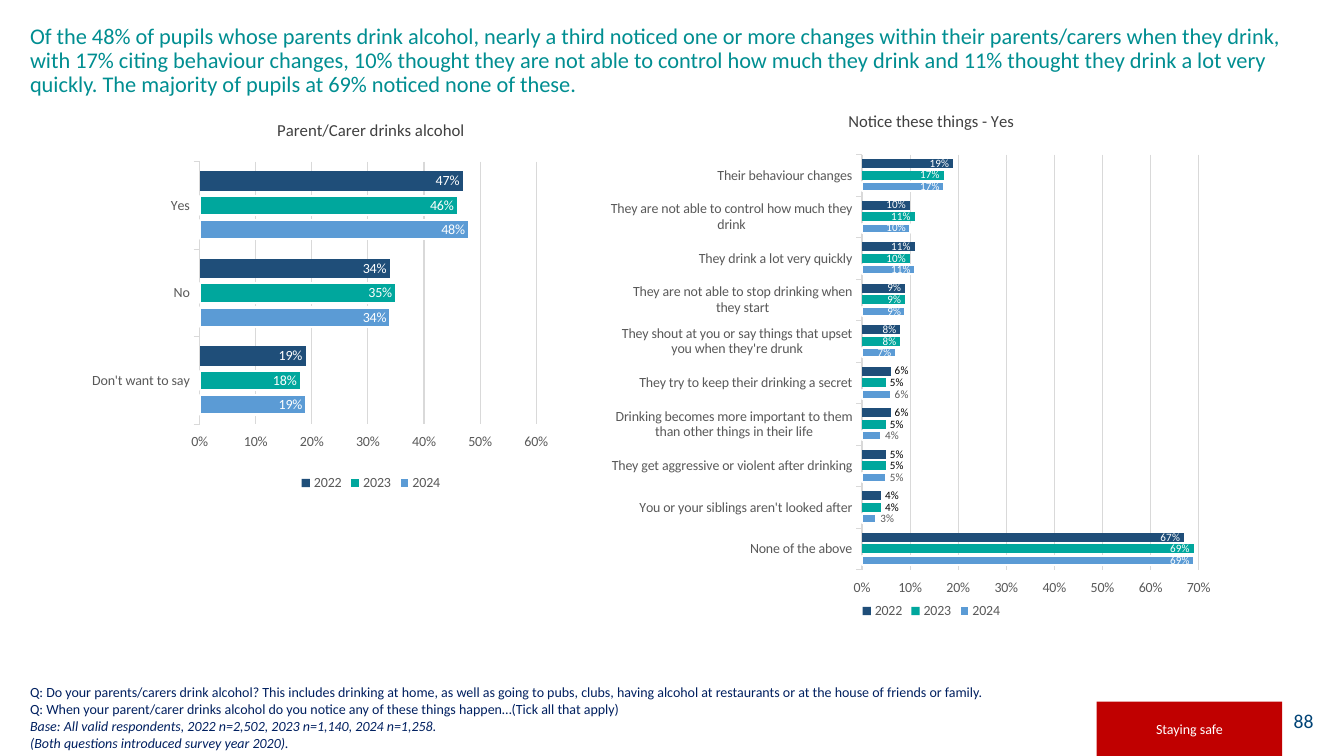
from lxml.etree import SubElement
from pptx import Presentation
from pptx.chart.data import CategoryChartData
from pptx.dml.color import RGBColor
from pptx.enum.chart import XL_CHART_TYPE, XL_LABEL_POSITION, XL_LEGEND_POSITION, XL_TICK_MARK
from pptx.enum.shapes import MSO_SHAPE
from pptx.enum.text import MSO_ANCHOR, PP_ALIGN
from pptx.oxml.ns import qn
from pptx.util import Pt

FONT = "Calibri"
GREY = "595959"
GRID = "D9D9D9"
WHITE = "FFFFFF"
YEAR_COLOURS = {"2024": "5B9BD5", "2023": "00A79D", "2022": "1F4E79"}

HEADLINE = (
    "Of the 48% of pupils whose parents drink alcohol, nearly a third noticed one or more "
    "changes within their parents/carers when they drink, with 17% citing behaviour changes, "
    "10% thought they are not able to control how much they drink and 11% thought they drink "
    "a lot very quickly. The majority of pupils at 69% noticed none of these."
)
QUESTIONS = [
    "Q: Do your parents/carers drink alcohol? This includes drinking at home, as well as going "
    "to pubs, clubs, having alcohol at restaurants or at the house of friends or family.",
    "Q: When your parent/carer drinks alcohol do you notice any of these things happen…"
    "(Tick all that apply)",
]
BASES = [
    "Base: All valid respondents, 2022 n=2,502, 2023 n=1,140, 2024 n=1,258.",
    "(Both questions introduced survey year 2020).",
]
DRINKS = {
    "Don't want to say": (0.19, 0.18, 0.19),
    "No": (0.34, 0.35, 0.34),
    "Yes": (0.48, 0.46, 0.47),
}
CHANGES = {
    "None of the above": (0.69, 0.69, 0.67),
    "You or your siblings aren't looked after": (0.03, 0.04, 0.04),
    "They get aggressive or violent after drinking": (0.05, 0.05, 0.05),
    "Drinking becomes more important to them than other things in their life": (0.04, 0.05, 0.06),
    "They try to keep their drinking a secret": (0.06, 0.05, 0.06),
    "They shout at you or say things that upset you when they're drunk": (0.07, 0.08, 0.08),
    "They are not able to stop drinking when they start": (0.09, 0.09, 0.09),
    "They drink a lot very quickly": (0.11, 0.10, 0.11),
    "They are not able to control how much they drink": (0.10, 0.11, 0.10),
    "Their behaviour changes": (0.17, 0.17, 0.19),
}


def colour(value):
    return RGBColor.from_string(value)


def set_font(font, size, value):
    font.name = FONT
    font.size = Pt(size)
    font.bold = False
    font.color.rgb = colour(value)


def add_text(page, place, lines, size, value, anchor=MSO_ANCHOR.TOP, spacing=None, italic_from=None):
    box = page.shapes.add_textbox(*map(Pt, place))
    frame = box.text_frame
    frame.word_wrap = True
    frame.vertical_anchor = anchor
    frame.text = "\n".join(lines)
    for index, para in enumerate(frame.paragraphs):
        set_font(para.font, size, value)
        para.font.italic = italic_from is not None and index >= italic_from
        if spacing:
            para.line_spacing = spacing


def add_block(page, place, text, fill, size, value, alignment):
    block = page.shapes.add_shape(MSO_SHAPE.RECTANGLE, *map(Pt, place))
    block.shadow.inherit = False
    block.fill.solid()
    block.fill.fore_color.rgb = colour(fill)
    block.line.fill.background()
    block.text_frame.vertical_anchor = MSO_ANCHOR.MIDDLE
    para = block.text_frame.paragraphs[0]
    para.text = text
    para.alignment = alignment
    set_font(para.font, size, value)


def set_plot_area(chart, fractions):
    area = chart._chartSpace.find(".//" + qn("c:plotArea"))
    for old in area.findall(qn("c:layout")):
        area.remove(old)
    layout = SubElement(area, qn("c:layout"))
    area.insert(0, layout)
    manual = SubElement(layout, qn("c:manualLayout"))
    settings = [("layoutTarget", "inner"), ("xMode", "edge"), ("yMode", "edge")]
    settings += zip("xywh", fractions)
    for name, value in settings:
        SubElement(manual, qn("c:" + name)).set("val", str(value))


def style_axes(chart, maximum):
    categories, values = chart.category_axis, chart.value_axis
    for axis in (categories, values):
        set_font(axis.tick_labels.font, 10, GREY)
        axis.major_tick_mark = XL_TICK_MARK.OUTSIDE
        axis.minor_tick_mark = XL_TICK_MARK.NONE
    values.minimum_scale = 0
    values.maximum_scale = maximum
    values.major_unit = 0.1
    values.tick_labels.number_format = "0%"
    values.tick_labels.number_format_is_linked = False
    values.format.line.fill.background()
    for line in (categories.format.line, values.major_gridlines.format.line):
        line.color.rgb = colour(GRID)
        line.width = Pt(0.75)


def style_series(series, label_size, outlined, outside):
    series.format.fill.solid()
    series.format.fill.fore_color.rgb = colour(YEAR_COLOURS[series.name])
    if series.name in outlined:
        series.format.line.color.rgb = colour(WHITE)
        series.format.line.width = Pt(1.5)
    else:
        series.format.line.fill.background()
    labels = series.data_labels
    labels.show_value = True
    labels.number_format = "0%"
    labels.number_format_is_linked = False
    labels.position = XL_LABEL_POSITION.INSIDE_END
    set_font(labels.font, label_size, WHITE)
    for index in outside:
        label = series.points[index].data_label
        set_font(label.font, label_size, GREY if series.name == "2024" else "000000")
        label.position = XL_LABEL_POSITION.OUTSIDE_END


def add_bars(page, place, title, answers, plot_area, maximum, label_size, outlined, outside=()):
    data = CategoryChartData(number_format="0%")
    data.categories = list(answers)
    for year, shares in zip(YEAR_COLOURS, zip(*answers.values())):
        data.add_series(year, shares)
    chart = page.shapes.add_chart(XL_CHART_TYPE.BAR_CLUSTERED, *map(Pt, place), data).chart
    set_font(chart.font, 10, "000000")
    chart.has_title = True
    para = chart.chart_title.text_frame.paragraphs[0]
    para.text = title
    set_font(para.font, 12, "404040")
    chart.chart_title.include_in_layout = False
    chart.has_legend = True
    chart.legend.position = XL_LEGEND_POSITION.BOTTOM
    chart.legend.include_in_layout = False
    set_font(chart.legend.font, 10, GREY)
    plot = chart.plots[0]
    plot.gap_width = 100
    plot.overlap = -25
    plot.vary_by_categories = False
    style_axes(chart, maximum)
    for series in plot.series:
        style_series(series, label_size, outlined, outside)
    set_plot_area(chart, plot_area)


def main():
    deck = Presentation()
    deck.slide_width, deck.slide_height = Pt(960), Pt(540)
    page = deck.slides.add_slide(deck.slide_layouts[6])
    add_block(page, (902.88, 500.4, 42.48, 28.8), "88", WHITE, 14, "004376", PP_ALIGN.RIGHT)
    add_text(page, (14.4, 14.4, 923.76, 70.56), [HEADLINE], 16, "008E91", spacing=0.9)
    add_text(page, (14.4, 484.56, 805.68, 55.44), QUESTIONS + BASES, 10, "002060",
             anchor=MSO_ANCHOR.BOTTOM, italic_from=len(QUESTIONS))
    add_bars(page, (54, 73.44, 421.92, 280.08), "Parent/Carer drinks alcohol", DRINKS,
             (0.21, 0.15, 0.57, 0.67), 0.6, 10, ("2024", "2023"))
    add_bars(page, (436.32, 64.8, 453.6, 380.16), "Notice these things - Yes", CHANGES,
             (0.39, 0.12, 0.535, 0.78), 0.7, 8, ("2024",), outside=range(1, 5))
    add_block(page, (783.36, 501.12, 132.48, 38.88), "Staying safe", "C00000", 10, WHITE,
              PP_ALIGN.CENTER)
    deck.save("out.pptx")


if __name__ == "__main__":
    main()
